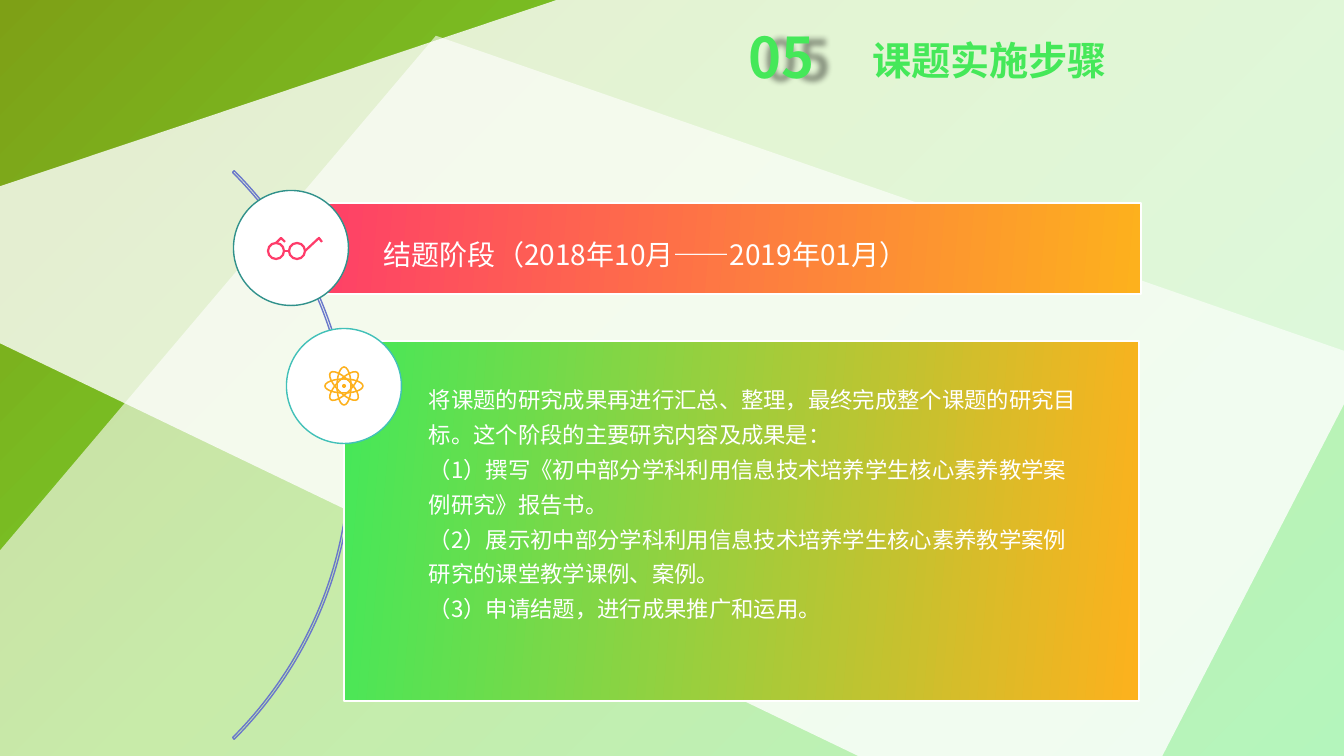
from dataclasses import dataclass

from lxml import etree
from pptx import Presentation
from pptx import util as u
from pptx.dml.color import RGBColor
from pptx.enum import shapes, text
from pptx.oxml.ns import qn

SLIDE_WIDTH, SLIDE_HEIGHT = 1344, 756
PX = u.Inches(7.5) / SLIDE_HEIGHT
SHAPE = shapes.MSO_SHAPE


@dataclass(frozen=True)
class Theme:
    font: str = "Noto Sans CJK SC"
    white: str = "FFFFFF"
    olive: str = "7EA016"
    leaf: str = "76CD2A"
    green: str = "45E859"
    rose: str = "FE3C6A"
    amber: str = "FDB11D"
    violet: str = "6A78CB"
    teal: str = "30918B"
    aqua: str = "41C0B8"
    shadow: str = "000000"
    number_size: int = 40
    title_size: int = 28
    stage_size: int = 20
    body_size: int = 16


def px(value):
    return u.Emu(round(value * PX))


def rgb(color):
    return RGBColor.from_string(color)


def add_node(parent, tag, **attributes):
    return etree.SubElement(parent, qn(tag), {k: str(v) for k, v in attributes.items()})


class SlideBuilder:
    def __init__(self, presentation, theme):
        self.theme = theme
        self.slide = presentation.slides.add_slide(presentation.slide_layouts[5])
        self.shapes = self.slide.shapes

    def shape(self, kind, box, fill=None, line=None, weight=1, rotation=0, alpha=None, parent=None):
        shape = (parent or self.shapes).add_shape(kind, *map(px, box))
        shape.rotation = rotation
        self.paint(shape, fill, line, weight)
        if alpha is not None:
            color = shape.element.spPr.find(qn("a:solidFill")).find(qn("a:srgbClr"))
            add_node(color, "a:alpha", val=alpha * 1000)
        return shape

    def paint(self, shape, fill, line, weight):
        shape.shadow.inherit = False
        if fill:
            shape.fill.solid()
            shape.fill.fore_color.rgb = rgb(fill)
        else:
            shape.fill.background()
        if line:
            shape.line.color.rgb = rgb(line)
            shape.line.width = u.Pt(weight)
        else:
            shape.line.fill.background()

    def gradient(self, shape, stops, angle=None):
        """Fill along an angle in degrees, or outward from the top left corner."""
        properties = shape.element.spPr
        gradient = etree.Element(qn("a:gradFill"), rotWithShape="1")
        stop_list = add_node(gradient, "a:gsLst")
        for position, color in stops:
            stop = add_node(stop_list, "a:gs", pos=position * 1000)
            add_node(stop, "a:srgbClr", val=color)
        if angle is None:
            circle = add_node(gradient, "a:path", path="circle")
            add_node(circle, "a:fillToRect", r=100000, b=100000)
        else:
            add_node(gradient, "a:lin", ang=angle * 60000, scaled=0)
        properties.replace(properties.find(qn("a:noFill")), gradient)

    def circle(self, center, radius, **style):
        x, y = center
        return self.shape(SHAPE.OVAL, (x - radius, y - radius, 2 * radius, 2 * radius), **style)

    def polyline(self, points, color, weight, parent):
        builder = parent.build_freeform(*points[0], scale=PX)
        builder.add_line_segments(points[1:], close=False)
        self.paint(builder.convert_to_shape(), None, color, weight)

    def connector(self, start, end, color, weight, parent):
        line = parent.add_connector(shapes.MSO_CONNECTOR.STRAIGHT, *map(px, (*start, *end)))
        line.line.color.rgb = rgb(color)
        line.line.width = u.Pt(weight)
        add_node(line.element.spPr, "a:effectLst")

    def set_text(self, frame, lines, size, color, bold=False, spacing=1.0):
        frame.word_wrap = True
        for index, line in enumerate(lines):
            paragraph = frame.add_paragraph() if index else frame.paragraphs[0]
            paragraph.text = line
            paragraph.alignment = text.PP_ALIGN.LEFT
            paragraph.line_spacing = spacing
            font = paragraph.font
            font.size, font.bold, font.name = u.Pt(size), bold, self.theme.font
            font.color.rgb = rgb(color)
            defaults = paragraph._p.pPr.find(qn("a:defRPr"))
            add_node(defaults, "a:ea", typeface=self.theme.font)

    def text_box(self, box, lines, size, color, **style):
        shape = self.shapes.add_textbox(*map(px, box))
        self.set_text(shape.text_frame, lines, size, color, **style)
        return shape

    def title(self, box, line):
        title = self.shapes.title
        title.element.getparent().append(title.element)  # above the backdrop
        title.left, title.top, title.width, title.height = map(px, box)
        title.text_frame.vertical_anchor = text.MSO_ANCHOR.MIDDLE
        self.set_text(title.text_frame, [line], self.theme.title_size, self.theme.green, bold=True)

    def section_number(self, box, number):
        shape = self.text_box(box, [number], self.theme.number_size, self.theme.green,
                              bold=True, spacing=0.9)
        shape.text_frame.vertical_anchor = text.MSO_ANCHOR.MIDDLE
        effects = add_node(shape.element.spPr, "a:effectLst")
        shadow = add_node(effects, "a:outerShdw", blurRad=px(6), dist=px(16), dir=600000,
                          algn="l", rotWithShape=0)
        add_node(add_node(shadow, "a:srgbClr", val=self.theme.shadow), "a:alpha", val=40000)

    def backdrop(self):
        theme = self.theme
        base = self.shape(SHAPE.RECTANGLE, (0, 0, SLIDE_WIDTH, SLIDE_HEIGHT))
        self.gradient(base, [(0, theme.olive), (42, theme.leaf), (100, theme.green)])
        for box, rotation, alpha in (((-892, 18, 2920, 1001), 344.7, 60),
                                     ((-87, -102, 2060, 1001), 161.5, 80)):
            self.shape(SHAPE.ISOSCELES_TRIANGLE, box, theme.white, rotation=rotation, alpha=alpha)

    def arc(self, box):
        arc = self.shape(SHAPE.BLOCK_ARC, box, line=self.theme.violet)
        for index, value in enumerate((189, 27, 0.003)):
            arc.adjustments[index] = value

    def panel(self, box, start_color, badge_center, badge_line):
        """Gradient panel with a round badge over its left edge."""
        panel = self.shape(SHAPE.RECTANGLE, box, line=self.theme.white)
        self.gradient(panel, [(0, start_color), (100, self.theme.amber)], angle=5)
        self.circle(badge_center, 57.5, fill=self.theme.white, line=badge_line)

    def glasses_icon(self):
        color, weight = self.theme.rose, 1.6
        icon = self.shapes.add_group_shape().shapes
        for x in (276, 297):
            self.circle((x, 251), 8, line=color, weight=weight, parent=icon)
        self.connector((284, 251), (289, 251), color, weight, icon)
        for temple in ([(276, 243), (281, 238), (285, 242)],
                       [(305, 251), (319, 238), (322, 242)]):
            self.polyline(temple, color, weight, icon)

    def atom_icon(self, center):
        x, y = center
        color = self.theme.amber
        icon = self.shapes.add_group_shape().shapes
        for rotation in range(0, 180, 45):
            self.shape(SHAPE.OVAL, (x - 19, y - 7, 38, 14), line=color, weight=1.1,
                       rotation=rotation, parent=icon)
        self.circle(center, 2, fill=color, parent=icon)


def main():
    theme = Theme()
    presentation = Presentation()
    presentation.slide_width, presentation.slide_height = px(SLIDE_WIDTH), px(SLIDE_HEIGHT)
    builder = SlideBuilder(presentation, theme)

    builder.backdrop()
    builder.section_number((739, 24, 107, 72), "05")
    builder.title((862, 24, 710, 72), "课题实施步骤")

    builder.arc((-452, 53, 804, 804))
    builder.panel((291, 203, 850, 91), theme.rose, (291, 248), theme.teal)
    builder.panel((344, 341, 795, 360), theme.green, (344, 386), theme.aqua)
    builder.glasses_icon()
    builder.atom_icon((344, 386))

    stage = ["结题阶段（2018年10月——2019年01月）"]
    tasks = [
        "将课题的研究成果再进行汇总、整理，最终完成整个课题的研究目标。这个阶段的主要研究内容及成果是：",
        "（1）撰写《初中部分学科利用信息技术培养学生核心素养教学案例研究》报告书。",
        "（2）展示初中部分学科利用信息技术培养学生核心素养教学案例研究的课堂教学课例、案例。",
        "（3）申请结题，进行成果推广和运用。",
    ]
    for box, lines, size in (((374, 222, 736, 54), stage, theme.stage_size),
                             ((419, 373, 670, 257), tasks, theme.body_size)):
        shape = builder.text_box(box, lines, size, theme.white, spacing=1.3)
        shape.text_frame.auto_size = text.MSO_AUTO_SIZE.SHAPE_TO_FIT_TEXT

    presentation.save("out.pptx")


if __name__ == "__main__":
    main()
